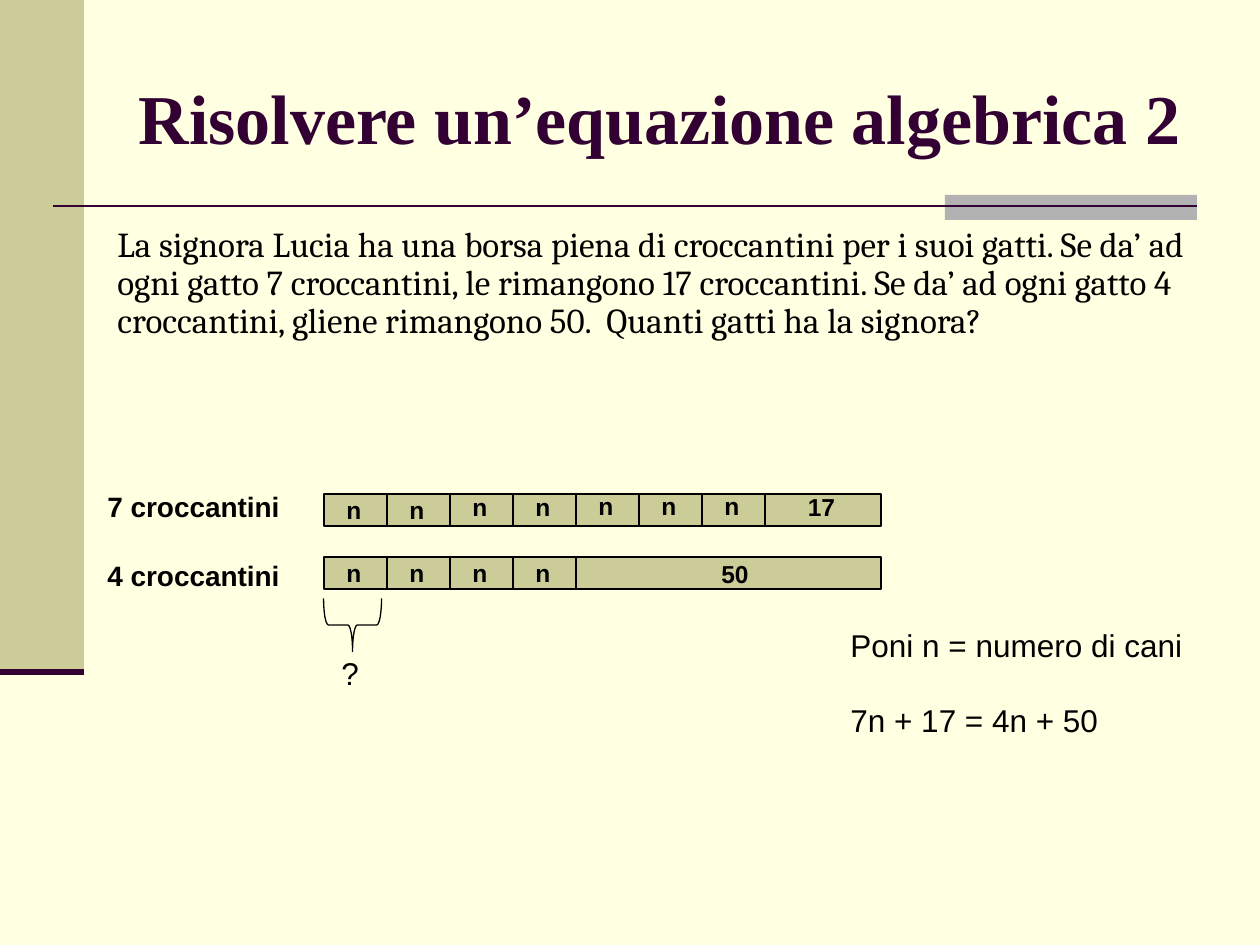
import pptx
import pptx.dml.color
import pptx.enum.shapes
import pptx.enum.text
import pptx.oxml.ns
import pptx.util
from lxml import etree

RGB = pptx.dml.color.RGBColor
CREAM = RGB(0xFF, 0xFF, 0xE1)
OLIVE = RGB(0xCC, 0xCC, 0x99)
GREY = RGB(0xB2, 0xB2, 0xB2)
PLUM = RGB(0x33, 0x00, 0x33)
BLACK = RGB(0, 0, 0)

SHAPE = pptx.enum.shapes.MSO_SHAPE
ALIGN = pptx.enum.text.PP_ALIGN
ANCHOR = pptx.enum.text.MSO_ANCHOR
AUTO_SIZE = pptx.enum.text.MSO_AUTO_SIZE
PX = 914400 / 126

TITLE = "Risolvere un’equazione algebrica 2"
PROBLEM = (
    "La signora Lucia ha una borsa piena di croccantini per i suoi gatti. "
    "Se da’ ad ogni gatto 7 croccantini, le rimangono 17 croccantini. "
    "Se da’ ad ogni gatto 4 croccantini, gliene rimangono 50.  "
    "Quanti gatti ha la signora?"
)
EQUATION = ["Poni n = numero di cani", "7n + 17 = 4n + 50"]

# One entry per bar; n_tops holds the top of each "n" label, one per unit cell
BARS = [
    {"label": "7 croccantini", "label_top": 483, "top": 494,
     "n_tops": [489, 489, 486, 486, 485, 485, 485],
     "rest": "17", "rest_at": (794, 486, 55, 42)},
    {"label": "4 croccantini", "label_top": 552, "top": 557,
     "n_tops": [552] * 4,
     "rest": "50", "rest_at": (651, 553, 168, 42)},
]
BAR_LEFT, BAR_WIDTH, BAR_HEIGHT, UNIT = 324, 557, 32, 63

LABEL_FONT = {"name": "Arial", "size": 16, "bold": True}
CELL_FONT = {"name": "Arial", "size": 14, "bold": True}
NOTE_FONT = {"name": "Arial", "size": 18}
PROBLEM_FONT = {"name": "Cambria", "size": 20}
TITLE_FONT = {"name": "Times New Roman", "size": 40, "bold": True}


def emu(*lengths):
    return [round(length * PX) for length in lengths]


def format_font(font, values, color=BLACK):
    for name, value in values.items():
        setattr(font, name, pptx.util.Pt(value) if name == "size" else value)
    font.color.rgb = color


def add_text(page, at, lines, font, wrap=True, **para_format):
    box = page.shapes.add_textbox(*emu(*at))
    frame = box.text_frame
    frame.word_wrap = wrap
    frame.auto_size = AUTO_SIZE.SHAPE_TO_FIT_TEXT
    for index, line in enumerate(lines):
        para = frame.paragraphs[0] if index == 0 else frame.add_paragraph()
        for name, value in para_format.items():
            setattr(para, name, value)
        span = para.add_run()
        span.text = line
        format_font(span.font, font)
    return frame


def add_shape(page, kind, at, fill=None, line=None):
    shape = page.shapes.add_shape(kind, *emu(*at))
    shape.shadow.inherit = False
    for part, color in ((shape.fill, fill), (shape.line.fill, line)):
        if color is None:
            part.background()
        else:
            part.solid()
            part.fore_color.rgb = color
    if line is not None:
        shape.line.width = pptx.util.Pt(0.75)
    return shape


def add_line(page, start, end, color=BLACK, width=0.75):
    line = page.shapes.add_connector(
        pptx.enum.shapes.MSO_CONNECTOR.STRAIGHT, *emu(*start, *end))
    line.line.color.rgb = color
    line.line.width = pptx.util.Pt(width)
    etree.SubElement(line._element.spPr, pptx.oxml.ns.qn("a:effectLst"))


def add_decoration(page):
    add_shape(page, SHAPE.RECTANGLE, (0, 0, 84, 672), OLIVE)
    add_shape(page, SHAPE.RECTANGLE, (945, 195, 252, 25), GREY)
    add_line(page, (53, 206), (1197, 206), PLUM, 1.5)
    add_line(page, (0, 672), (84, 672), PLUM, 3.5)


def add_title(page):
    title = page.shapes.title
    title.left, title.top, title.width, title.height = emu(126, 38, 1071, 157)
    frame = title.text_frame
    frame.text = TITLE
    frame.word_wrap = True
    frame.vertical_anchor = ANCHOR.MIDDLE
    frame.paragraphs[0].alignment = ALIGN.LEFT
    format_font(frame.paragraphs[0].runs[0].font, TITLE_FONT, PLUM)


def add_bar(page, bar):
    top = bar["top"]
    add_text(page, (95, bar["label_top"], 242, 47), [bar["label"]], LABEL_FONT)
    add_shape(page, SHAPE.RECTANGLE, (BAR_LEFT, top, BAR_WIDTH, BAR_HEIGHT),
              OLIVE, BLACK)
    for index, n_top in enumerate(bar["n_tops"]):
        left = BAR_LEFT + index * UNIT
        right = left + UNIT
        add_line(page, (right, top), (right, top + BAR_HEIGHT))
        add_text(page, (left + 10, n_top, 42, 42), ["n"], CELL_FONT)
    add_text(page, bar["rest_at"], [bar["rest"]], CELL_FONT,
             alignment=ALIGN.CENTER)


def add_unknown(page):
    brace = add_shape(page, SHAPE.RIGHT_BRACE, (326, 596, 53, 58), line=BLACK)
    brace.rotation = 90
    brace.adjustments[0] = 0.09
    add_text(page, (329, 648, 43, 50), ["?"], NOTE_FONT, wrap=False)


def main():
    deck = pptx.Presentation()
    deck.slide_width, deck.slide_height = emu(1260, 945)
    page = deck.slides.add_slide(deck.slide_layouts[5])
    page.background.fill.solid()
    page.background.fill.fore_color.rgb = CREAM

    add_decoration(page)
    add_title(page)
    add_text(page, (105, 221, 1113, 165), [PROBLEM], PROBLEM_FONT,
             line_spacing=0.9)
    for bar in BARS:
        add_bar(page, bar)
    add_unknown(page)
    equation = add_text(page, (838, 620, 411, 164), EQUATION, NOTE_FONT)
    equation.paragraphs[1].space_before = pptx.util.Pt(21)

    deck.save("out.pptx")


if __name__ == "__main__":
    main()
